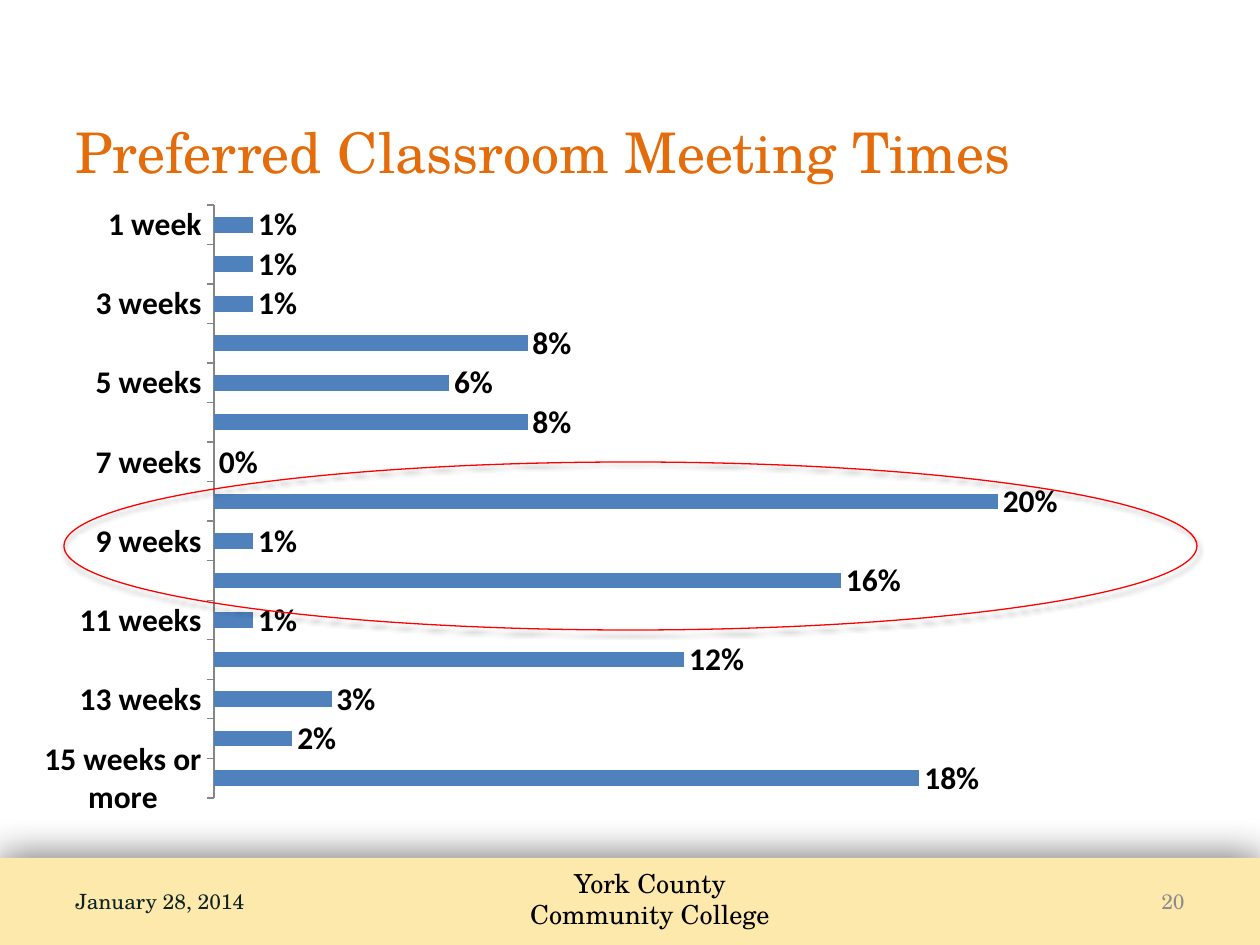
"""Build the slide on preferred classroom meeting times."""
from lxml.etree import SubElement
from pptx import Presentation
from pptx.chart.data import CategoryChartData
from pptx.dml.color import RGBColor
from pptx.enum.chart import XL_CHART_TYPE, XL_LABEL_POSITION, XL_TICK_MARK
from pptx.enum.shapes import MSO_SHAPE
from pptx.enum.text import MSO_ANCHOR, PP_ALIGN
from pptx.oxml import parse_xml
from pptx.oxml.ns import nsdecls, qn
from pptx.util import Pt

SCALE = 914400 / 126
SERIF = "TeX Gyre Schola"
TITLE = "Preferred Classroom Meeting Times"
SHARES = [1, 1, 1, 8, 6, 8, 0, 20, 1, 16, 1, 12, 3, 2, 18]
WEEKS = ["1 week", *(f"{n} weeks" for n in range(2, 15)), "15 weeks or more"]
FOOTER = [
    (["York County", "Community College"], (488, 861, 324, 77), 15, "000000",
     PP_ALIGN.CENTER, MSO_ANCHOR.TOP),
    (["January 28, 2014"], (63, 876, 315, 50), 12, "0D2322",
     PP_ALIGN.LEFT, MSO_ANCHOR.MIDDLE),
    (["20"], (903, 876, 294, 50), 12, "8C8C8C",
     PP_ALIGN.RIGHT, MSO_ANCHOR.MIDDLE),
]
CHART = (21, 193, 1197, 638)
PLOT = (214, 205, 980, 593)


def px(*vals):
    return [round(val * SCALE) for val in vals]


def color(code):
    return RGBColor.from_string(code)


def style(font, size, code, name=SERIF, bold=None):
    font.size, font.name, font.bold = Pt(size), name, bold
    font.color.rgb = color(code)


def write(shape, lines, size, code, align, anchor):
    frame = shape.text_frame
    frame.word_wrap = True
    frame.vertical_anchor = anchor
    frame.text = "\n".join(lines)
    for para in frame.paragraphs:
        para.alignment = align
        style(para.font, size, code)


def shade(shape, alpha, blur, dist, angle):
    shape.shadow.inherit = False
    glow = shape.shadow._element.find(qn("a:effectLst"))
    glow.append(parse_xml(
        f'<a:outerShdw {nsdecls("a")} blurRad="{Pt(blur)}" dist="{Pt(dist)}" '
        f'dir="{angle * 60000}" rotWithShape="0"><a:srgbClr val="000000">'
        f'<a:alpha val="{alpha * 1000}"/></a:srgbClr></a:outerShdw>'))


def place(chart):
    area = chart._chartSpace.chart.plotArea
    old = area.find(qn("c:layout"))
    if old is not None:
        area.remove(old)
    left, top, wide, high = CHART
    parts = {"x": (PLOT[0] - left) / wide, "y": (PLOT[1] - top) / high,
             "w": PLOT[2] / wide, "h": PLOT[3] / high}
    layout = parse_xml(f'<c:layout {nsdecls("c")}/>')
    manual = SubElement(layout, qn("c:manualLayout"))
    SubElement(manual, qn("c:layoutTarget")).set("val", "inner")
    for key in "xy":
        SubElement(manual, qn(f"c:{key}Mode")).set("val", "edge")
    for key, val in parts.items():
        SubElement(manual, qn(f"c:{key}")).set("val", f"{val:.4f}")
    area.insert(0, layout)


def draw(slide):
    data = CategoryChartData(number_format="0%")
    data.categories = WEEKS
    data.add_series("Series 1", [share / 100 for share in SHARES])
    chart = slide.shapes.add_chart(
        XL_CHART_TYPE.BAR_CLUSTERED, *px(*CHART), data).chart
    chart.has_legend = chart.has_title = False
    style(chart.font, 18, "000000", "Calibri")

    cats = chart.category_axis
    cats.reverse_order = True
    cats.has_major_gridlines = False
    cats.major_tick_mark = XL_TICK_MARK.OUTSIDE
    cats.format.line.color.rgb = color("868686")
    style(cats.tick_labels.font, 18, "000000", "Calibri", True)
    skip = parse_xml(f'<c:tickLblSkip {nsdecls("c")} val="2"/>')
    cats._element.find(qn("c:noMultiLvlLbl")).addprevious(skip)

    axis = chart.value_axis
    axis.visible = axis.has_major_gridlines = False
    axis.minimum_scale, axis.maximum_scale = 0, 0.25

    plot = chart.plots[0]
    plot.gap_width = 150
    plot.vary_by_categories = False
    fill = plot.series[0].format.fill
    fill.solid()
    fill.fore_color.rgb = color("4F81BD")
    plot.has_data_labels = True
    tags = plot.data_labels
    tags.show_value = True
    tags.number_format, tags.number_format_is_linked = "0%", False
    tags.position = XL_LABEL_POSITION.OUTSIDE_END
    style(tags.font, 18, "000000", "Calibri", True)
    place(chart)


def main():
    deck = Presentation()
    deck.slide_width, deck.slide_height = px(1260, 945)
    slide = deck.slides.add_slide(deck.slide_layouts[5])
    shapes = slide.shapes

    band = shapes.add_shape(MSO_SHAPE.RECTANGLE, *px(0, 858, 1260, 87))
    band.fill.solid()
    band.fill.fore_color.rgb = color("FDE9AC")
    band.line.fill.background()
    shade(band, 65, 23.8, 0, 300)

    title = shapes.title
    title.left, title.top, title.width, title.height = px(63, 103, 1134, 96)
    write(title, [TITLE], 32, "E46C0A", PP_ALIGN.LEFT, MSO_ANCHOR.MIDDLE)

    for lines, box, *look in FOOTER:
        write(shapes.add_textbox(*px(*box)), lines, *look)

    draw(slide)

    ring = shapes.add_shape(MSO_SHAPE.OVAL, *px(64, 462, 1133, 168))
    ring.fill.background()
    ring.line.color.rgb = color("FF0000")
    ring.line.width = Pt(0.75)
    shade(ring, 35, 3.1, 1.8, 90)
    deck.save("out.pptx")


if __name__ == "__main__":
    main()
